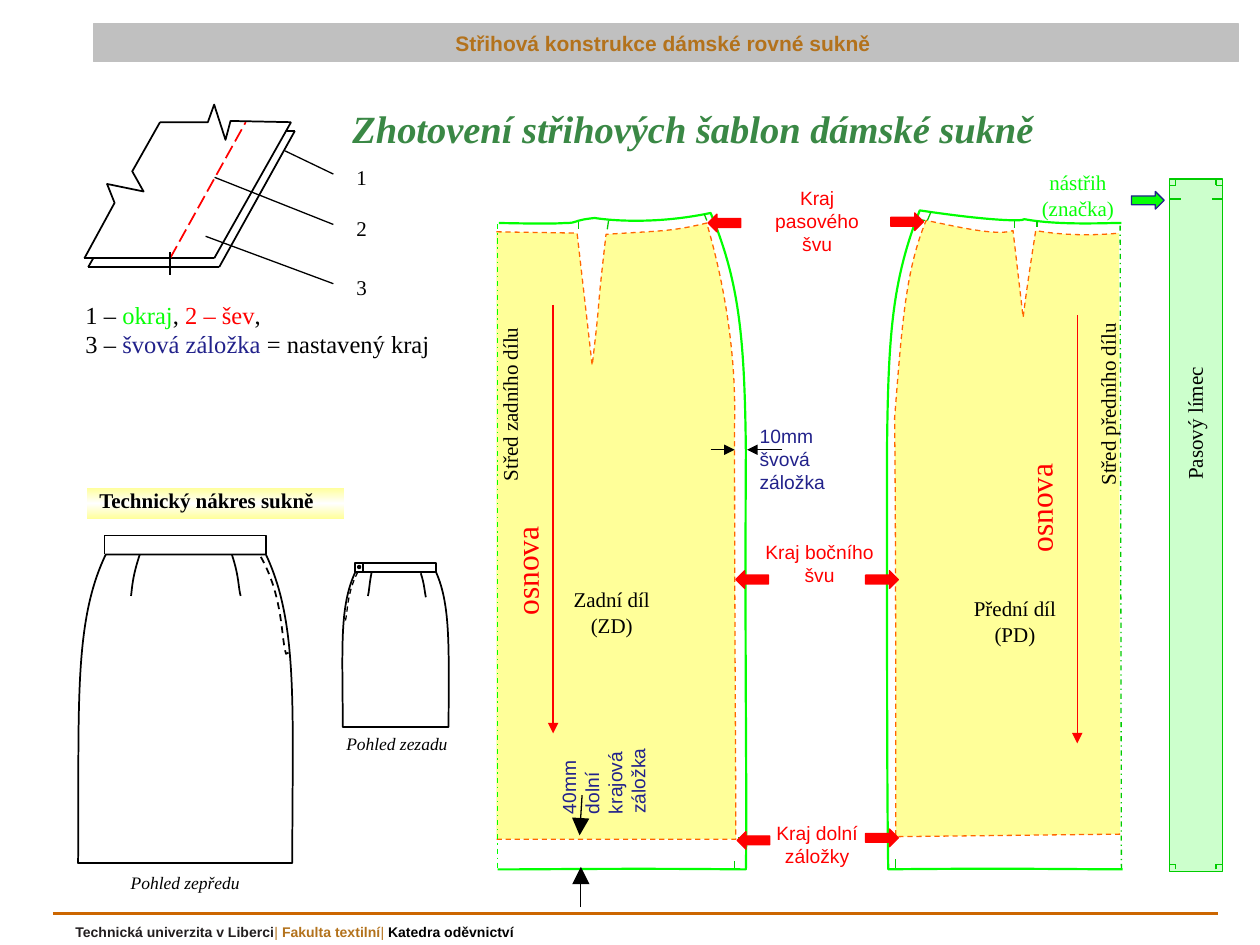
import copy
import itertools

import lxml.etree
import pptx
import pptx.dml.color
import pptx.enum.dml
import pptx.enum.shapes
import pptx.enum.text
import pptx.oxml.ns
import pptx.util

PX = 9144  # 100 px to the inch
Color = pptx.dml.color.RGBColor
Shape = pptx.enum.shapes.MSO_SHAPE
Align = pptx.enum.text.PP_ALIGN
Anchor = pptx.enum.text.MSO_ANCHOR
Dash = pptx.enum.dml.MSO_LINE
qn = pptx.oxml.ns.qn

BLACK, WHITE, RED = Color(0, 0, 0), Color(255, 255, 255), Color(255, 0, 0)
SILVER, BROWN, INK = Color(0xC0, 0xC0, 0xC0), Color(0xB3, 0x72, 0x1C), Color(0x22, 0x1E, 0x1F)
ORANGE, SEAM = Color(0xCC, 0x66, 0x00), Color(0xFF, 0x66, 0x00)
NAVY, LIME = Color(0x22, 0x22, 0x8B), Color(0x07, 0xFF, 0x07)
EDGE, NOTCH = Color(0x00, 0xFF, 0x00), Color(0x00, 0xCC, 0x00)
YELLOW, MINT, TITLE_GREEN = Color(0xFF, 0xFF, 0x99), Color(0xCC, 0xFF, 0xCC), Color(0x3A, 0x88, 0x45)

SERIF = dict(name="Times New Roman", size=12, color=BLACK)
CAPTION = dict(SERIF, size=10, italic=True)
LEGEND = dict(SERIF, size=14)
GRAIN = dict(SERIF, size=18, color=RED)
ALLOWANCE = dict(name="Arial", size=11, color=NAVY)
EDGE_NAME = dict(ALLOWANCE, color=RED)
FOOTER = dict(name="Arial", size=8, color=BROWN)

TITLE = [("Zhotovení střihových šablon dámské sukně",
          dict(SERIF, size=22, color=TITLE_GREEN, bold=True, italic=True))]
HEADER = [("Střihová konstrukce dámské rovné sukně ", dict(FOOTER, size=12, bold=True))]
FOOTER_RUNS = [("Technická univerzita v Liberci", dict(FOOTER, color=INK, bold=True)),
               ("| ", FOOTER), ("Fakulta textilní", dict(FOOTER, bold=True)),
               ("| ", FOOTER), ("Katedra oděvnictví", dict(FOOTER, color=BLACK, bold=True))]
LEGEND_RUNS = [("1 – ", LEGEND), ("okraj", dict(LEGEND, color=LIME)), (", ", LEGEND),
               ("2 – šev", dict(LEGEND, color=RED)), (", ", LEGEND), ("\n3 – ", LEGEND),
               ("švová záložka ", dict(LEGEND, color=NAVY)), ("= nastavený kraj", LEGEND)]

# text, (left, top, width, height), format, alignment, rotation
LABELS = [
    ("40mm dolní krajová záložka", (438, 573, 82, 84), ALLOWANCE, Align.LEFT, 269.6),
    ("10mm švová záložka", (593, 332, 85, 66), ALLOWANCE, Align.LEFT, 0),
    ("osnova", (360, 421, 115, 40), GRAIN, Align.LEFT, 269.6),
    ("osnova", (768, 371, 115, 40), GRAIN, Align.LEFT, 269.6),
    ("Pasový límec", (862, 321, 172, 30), SERIF, Align.CENTER, 270),
    ("Střed zadního dílu", (301, 306, 207, 30), SERIF, Align.CENTER, 270),
    ("Střed předního dílu", (773, 306, 212, 30), SERIF, Align.CENTER, 270),
    ("Pohled zepředu", (67, 687, 160, 27), CAPTION, Align.CENTER, 0),
    ("Pohled zezadu", (235, 577, 160, 27), CAPTION, Align.CENTER, 0),
    ("nástřih (značka)", (815, 130, 81, 51), dict(SERIF, color=LIME), Align.CENTER, 0),
]
# text, box, corner of the left arrow, corner of the right arrow
EDGES = [
    ("Kraj pasového švu", (594, 143, 109, 66), (562, 170), (707, 169)),
    ("Kraj bočního švu", (596, 424, 109, 47), (584, 453), (687, 453)),
    ("Kraj dolní záložky", (594, 647, 109, 47), (585, 660), (687, 658)),
]
# number, top, pointer adjustments
CALLOUTS = [("1", 126, (-0.24, -1.56)), ("2", 166, (-0.97, -3.42)), ("3", 213, (-0.98, -3.66))]

# Outlines: two numbers are a straight step, six are a Bezier step.
BACK_PIECE = [(394, 184), (458, 185), (470, 290), (478, 222, 472, 264, 481, 186),
              (525, 183, 532, 184, 561, 177), (561, 179, 585, 251, 583, 336),
              (583, 502, 584, 605, 584, 666), (394, 666)]
FRONT_PIECE = [(889, 662), (711, 664), (711, 592, 711, 420, 710, 332),
               (716, 255, 719, 214, 735, 175), (752, 178, 790, 188, 804, 183), (812, 252),
               (812, 252, 814, 234, 822, 183), (855, 189, 888, 185, 888, 185)]
BACK_EDGE = [(396, 177), (404, 177, 435, 178, 448, 177), (460, 177, 453, 175, 472, 173),
             (472, 173, 512, 180, 564, 169), (587, 224, 591, 269, 592, 359),
             (591, 528, 593, 636, 592, 690), (495, 689, 436, 690, 395, 690)]
FRONT_EDGE = [(890, 177), (877, 177, 840, 179, 813, 174), (812, 176, 783, 175, 730, 167),
              (708, 223, 705, 266, 704, 356), (704, 525, 704, 636, 705, 690),
              (802, 689, 852, 690, 891, 690)]
FABRIC_EDGES = [
    [(67, 205), (91, 161), (85, 146), (114, 152), (105, 136), (127, 97)],
    [(127, 97), (165, 97), (170, 83), (179, 111), (183, 96), (231, 97)],
]
SKIRTS = [
    [(62, 685), (63, 562, 58, 494, 84, 440), (211, 440), (237, 495, 232, 562, 232, 685), (62, 685)],
    [(111, 440), (105, 458, 105, 466, 104, 473)],
    [(184, 440), (190, 458, 189, 466, 191, 473)],
    [(83, 440), (83, 425), (211, 425), (211, 440)],
    [(356, 577), (356, 516, 358, 481, 346, 454), (282, 454), (269, 482, 272, 515, 272, 577), (356, 577)],
    [(346, 454), (346, 447), (282, 447), (282, 454), (346, 454)],
    [(295, 454), (293, 464, 293, 470, 292, 473)],
    [(334, 455), (337, 464, 337, 470, 338, 474)],
]
POCKETS = [([(207, 442), (225, 474, 223, 507, 227, 519), (229, 518)], 1),
           ([(284, 454), (275, 471, 276, 487, 274, 493), (273, 493)], 0.75)]

FABRIC_LINES = [(70, 212, 174, 212), (174, 212, 234, 104), (67, 205, 170, 205),
                (170, 205, 231, 97), (70, 212, 74, 205), (227, 104, 234, 104)]
NOTCHES = [(459, 176, 459, 182), (483, 175, 482, 182), (567, 176, 562, 177), (559, 170, 561, 175),
           (592, 665, 586, 665), (583, 689, 583, 683), (805, 175, 805, 181), (823, 175, 823, 180),
           (739, 168, 736, 175), (729, 174, 734, 175), (710, 664, 705, 664), (711, 689, 711, 682),
           (928, 158, 937, 158), (962, 158, 970, 158)]
COLLAR_SIDES, COLLAR_ENDS = ((928, 933), (970, 965)), ((142, 147), (690, 686))
# line, colour, head size
ARROWS = [((461, 720, 461, 688), BLACK, "lg"), ((462, 631, 460, 663), BLACK, "lg"),
          ((621, 357, 593, 357), BLACK, "med"), ((564, 357, 583, 357), BLACK, "med"),
          ((855, 250, 855, 590), RED, "med"), ((439, 242, 439, 582), RED, "med")]

deck = pptx.Presentation()
deck.slide_width, deck.slide_height = 1000 * PX, 750 * PX
page = deck.slides.add_slide(deck.slide_layouts[5])


def write(box, runs, align=Align.LEFT, anchor=Anchor.TOP):
    frame = box.text_frame
    frame.word_wrap, frame.vertical_anchor = True, anchor
    para = frame.paragraphs[0]
    para.alignment = align
    for text, style in runs:
        if text.startswith("\n"):
            para.add_line_break()
        span = para.add_run()
        span.text = text.lstrip("\n")
        for key, value in style.items():
            if key == "color":
                span.font.color.rgb = value
            else:
                setattr(span.font, key, pptx.util.Pt(value) if key == "size" else value)


def stroke(shape, color, width, dash):
    shape.line.color.rgb = color
    shape.line.width = pptx.util.Pt(width)
    if dash:
        shape.line.dash_style = dash


def paint(shape, fill=None, line=None, width=0.75, dash=None):
    shape.shadow.inherit = False
    if fill is None:
        shape.fill.background()
    else:
        shape.fill.solid()
        shape.fill.fore_color.rgb = fill
    if line is None:
        shape.line.fill.background()
    else:
        stroke(shape, line, width, dash)


def add_label(runs, place, align=Align.LEFT, rotation=0):
    box = page.shapes.add_textbox(*(n * PX for n in place))
    box.rotation = rotation
    write(box, runs, align)


def add_figure(kind, place, **look):
    shape = page.shapes.add_shape(kind, *(n * PX for n in place))
    paint(shape, **look)
    return shape


def add_line(ends, color, width=0.75, dash=None, head=None):
    line = page.shapes.add_connector(pptx.enum.shapes.MSO_CONNECTOR.STRAIGHT, *(n * PX for n in ends))
    stroke(line, color, width, dash)
    properties = line.element.spPr
    if head:
        lxml.etree.SubElement(properties.find(qn("a:ln")), qn("a:tailEnd"), type="triangle", w=head, len=head)
    lxml.etree.SubElement(properties, qn("a:effectLst"))


def add_outline(steps, **look):
    """Draw an outline through all points, then join each Bezier step's three points into one curve."""
    points = [step[i:i + 2] for step in steps for i in range(0, len(step), 2)]
    builder = page.shapes.build_freeform(*points[0], scale=float(PX))
    builder.add_line_segments(points[1:], close=steps[0] == steps[-1])
    shape = builder.convert_to_shape()
    segments = iter(list(shape.element.iter(qn("a:lnTo"))))
    for step in steps[1:]:
        first = next(segments)
        if len(step) == 6:
            curve = lxml.etree.Element(qn("a:cubicBezTo"))
            first.addprevious(curve)
            for segment in (first, next(segments), next(segments)):
                curve.append(segment[0])
                segment.getparent().remove(segment)
    paint(shape, **look)


title = page.shapes.title
title.left, title.top, title.width, title.height = (n * PX for n in (100, 75, 900, 50))
write(title, TITLE, Align.CENTER, Anchor.BOTTOM)
write(add_figure(Shape.RECTANGLE, (74, 19, 909, 30), fill=SILVER, line=SILVER), HEADER, Align.CENTER)
add_label(FOOTER_RUNS, (50, 728, 917, 23))
add_line((42, 725, 967, 725), ORANGE, 2.25)

for ends in FABRIC_LINES:
    add_line(ends, BLACK, 1)
add_line((135, 205, 195, 97), RED, 1, Dash.LONG_DASH)
add_line((135, 200, 135, 218), BLACK)
for number, top, pointer in CALLOUTS:
    callout = add_figure(Shape.LINE_CALLOUT_1_NO_BORDER, (273, top, 30, 26), fill=WHITE, line=BLACK)
    for index, value in enumerate((0.47, -0.28) + pointer):
        callout.adjustments[index] = value
    write(callout, [(number, SERIF)])
add_label(LEGEND_RUNS, (58, 233, 358, 57))

add_line((889, 179, 890, 689), NOTCH, dash=Dash.DASH_DOT)
for piece, name, place in ((BACK_PIECE, "Zadní díl (ZD)", (440, 461, 91, 50)),
                           (FRONT_PIECE, "Přední díl (PD)", (760, 468, 91, 50))):
    add_outline(piece, fill=YELLOW, line=SEAM, dash=Dash.DASH)
    write(add_figure(Shape.RECTANGLE, place, fill=YELLOW), [(name, SERIF)], Align.CENTER)
add_line((395, 178, 395, 689), EDGE, dash=Dash.DASH_DOT)
for edge in (BACK_EDGE, FRONT_EDGE):
    add_outline(edge, line=EDGE, width=1.25)

add_figure(Shape.RECTANGLE, (928, 142, 42, 550), fill=MINT, line=NOTCH)
corners = []
for (side, inner_x), (end, inner_y) in itertools.product(COLLAR_SIDES, COLLAR_ENDS):
    corners += [(side, inner_y, inner_x, inner_y), (inner_x, end, inner_x, inner_y)]
for ends in NOTCHES + corners:
    add_line(ends, NOTCH)
for ends, color, head in ARROWS:
    add_line(ends, color, head=head)

heading = add_figure(Shape.RECTANGLE, (69, 387, 204, 25))
heading.fill.gradient()
heading.fill.gradient_angle = 90
for stop, color in zip(heading.fill.gradient_stops, (YELLOW, WHITE)):
    stop.color.rgb = color
stops = heading.element.spPr.find(qn("a:gradFill")).find(qn("a:gsLst"))
stops.append(copy.deepcopy(stops[0]))
for stop, position in zip(stops, ("0", "50000", "100000")):
    stop.set("pos", position)
write(heading, [("Technický nákres sukně", dict(SERIF, bold=True))], anchor=Anchor.BOTTOM)

for steps in FABRIC_EDGES + SKIRTS:
    add_outline(steps, line=BLACK, width=1)
for steps, width in POCKETS:
    add_outline(steps, line=BLACK, width=width, dash=Dash.DASH)
add_figure(Shape.OVAL, (284, 449, 2, 2), fill=BLACK, line=BLACK, width=1)
add_line((288, 447, 288, 455), BLACK)

add_figure(Shape.RIGHT_ARROW, (898, 152, 26, 14), fill=LIME, line=NAVY)
for text, place, left_arrow, right_arrow in EDGES:
    add_label([(text, EDGE_NAME)], place, Align.CENTER)
    for kind, corner in ((Shape.LEFT_ARROW, left_arrow), (Shape.RIGHT_ARROW, right_arrow)):
        add_figure(kind, corner + (26, 14), fill=RED, line=RED)
for text, place, style, align, rotation in LABELS:
    add_label([(text, style)], place, align, rotation)

deck.save("out.pptx")
